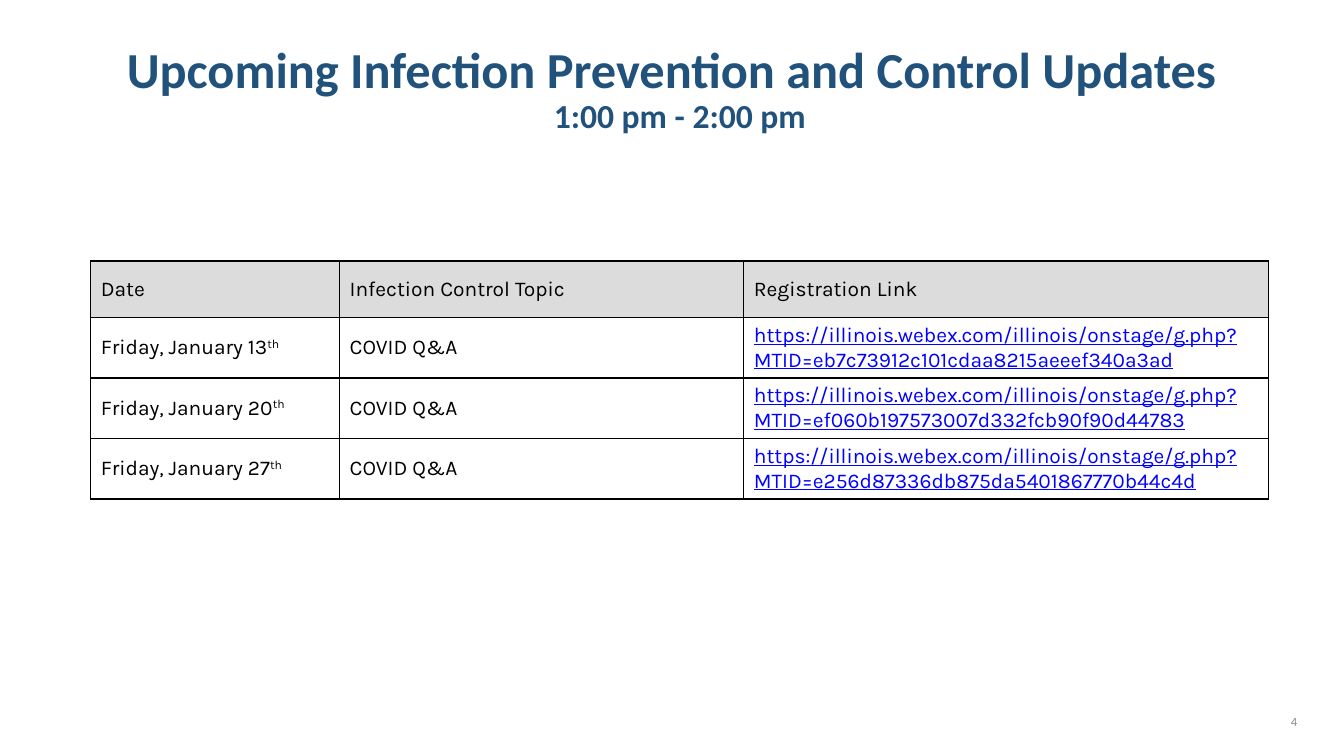
from dataclasses import dataclass
from typing import Any

from lxml.etree import SubElement
from pptx import Presentation
from pptx.dml.color import RGBColor
from pptx.enum.text import MSO_ANCHOR, PP_ALIGN
from pptx.oxml.ns import qn
from pptx.util import Pt

BLACK, NAVY, GREY, LINK_BLUE, HEADER_FILL = "000000", "20527C", "888888", "0000FF", "DCDCDC"
COLUMN_WIDTHS = (177.8, 288.7, 375.1)
HEADER_HEIGHT, SESSION_HEIGHT = 40.3, 43.2
HEADINGS = ("Date", "Infection Control Topic", "Registration Link")
LINK_BASE = "https://illinois.webex.com/illinois/onstage/g.php?MTID="


@dataclass
class Session:
    day: int
    meeting_id: str
    topic: str = "COVID Q&A"


SESSIONS = (
    Session(13, "eb7c73912c101cdaa8215aeeef340a3ad"),
    Session(20, "ef060b197573007d332fcb90f90d44783"),
    Session(27, "e256d87336db875da5401867770b44c4d"),
)


def rgb(value: str) -> RGBColor:
    return RGBColor.from_string(value)


def add_run(p: Any, text: str, color: str, **formats: Any) -> Any:
    r = p.add_run()
    r.text = text
    for name, value in formats.items():
        setattr(r.font, name, value)
    r.font.color.rgb = rgb(color)
    return r


def add_box(s: Any, left: float, top: float, width: float, height: float, **formats: Any) -> Any:
    tf = s.shapes.add_textbox(Pt(left), Pt(top), Pt(width), Pt(height)).text_frame
    for name, value in formats.items():
        setattr(tf, name, value)
    return tf


def style_cell(cell: Any, fill: str | None) -> None:
    cell.vertical_anchor = MSO_ANCHOR.MIDDLE
    # Borders precede the fill in the cell properties
    tc_pr = cell._tc.get_or_add_tcPr()
    for side in ("a:lnL", "a:lnR", "a:lnT", "a:lnB"):
        line = SubElement(tc_pr, qn(side), w=str(Pt(1)))
        SubElement(SubElement(line, qn("a:solidFill")), qn("a:srgbClr"), val=BLACK)
    if fill:
        cell.fill.solid()
        cell.fill.fore_color.rgb = rgb(fill)
    else:
        cell.fill.background()


def add_title(s: Any) -> None:
    tf = add_box(s, 83.5, 28.8, 804.3, 72.7, word_wrap=True)
    lines = (
        ("Upcoming Infection Prevention and Control Updates", 36, PP_ALIGN.LEFT),
        ("1:00 pm - 2:00 pm", 24, PP_ALIGN.CENTER),
    )
    for i, (text, size, alignment) in enumerate(lines):
        p = tf.add_paragraph() if i else tf.paragraphs[0]
        p.alignment, p.line_spacing = alignment, 0.9
        add_run(p, text, NAVY, name="Calibri", size=Pt(size), bold=True)


def add_schedule(s: Any) -> None:
    height = HEADER_HEIGHT + SESSION_HEIGHT * len(SESSIONS)
    table = s.shapes.add_table(
        len(SESSIONS) + 1, len(HEADINGS),
        Pt(64.8), Pt(186.5), Pt(sum(COLUMN_WIDTHS)), Pt(height),
    ).table
    table.first_row = table.horz_banding = False
    for column, width in zip(table.columns, COLUMN_WIDTHS):
        column.width = Pt(width)
    for i, row in enumerate(table.rows):
        row.height = Pt(SESSION_HEIGHT if i else HEADER_HEIGHT)
        for cell in row.cells:
            style_cell(cell, None if i else HEADER_FILL)

    body = {"name": "Karla", "size": Pt(15)}
    for cell, heading in zip(table.rows[0].cells, HEADINGS):
        add_run(cell.text_frame.paragraphs[0], heading, BLACK, **body)
    for i, session in enumerate(SESSIONS, 1):
        date, topic, link = (cell.text_frame.paragraphs[0] for cell in table.rows[i].cells)
        add_run(date, f"Friday, January {session.day}", BLACK, **body)
        suffix = add_run(date, "th", BLACK, **body)
        suffix.font._element.set("baseline", "30000")
        add_run(topic, session.topic, BLACK, **body)
        add_run(link, LINK_BASE + session.meeting_id, LINK_BLUE, underline=True, **body)


def add_slide_number(s: Any) -> None:
    margins = {f"margin_{side}": Pt(3.6) for side in ("left", "top", "right", "bottom")}
    tf = add_box(s, 912.2, 506.2, 18, 18, word_wrap=False,
                 vertical_anchor=MSO_ANCHOR.MIDDLE, **margins)
    p = tf.paragraphs[0]
    p.alignment = PP_ALIGN.RIGHT
    add_run(p, "4", GREY, name="Calibri", size=Pt(9))


def main() -> None:
    prs = Presentation()
    prs.slide_width, prs.slide_height = Pt(960), Pt(540)
    s = prs.slides.add_slide(prs.slide_layouts[6])
    add_title(s)
    add_schedule(s)
    add_slide_number(s)
    prs.save("out.pptx")


if __name__ == "__main__":
    main()
